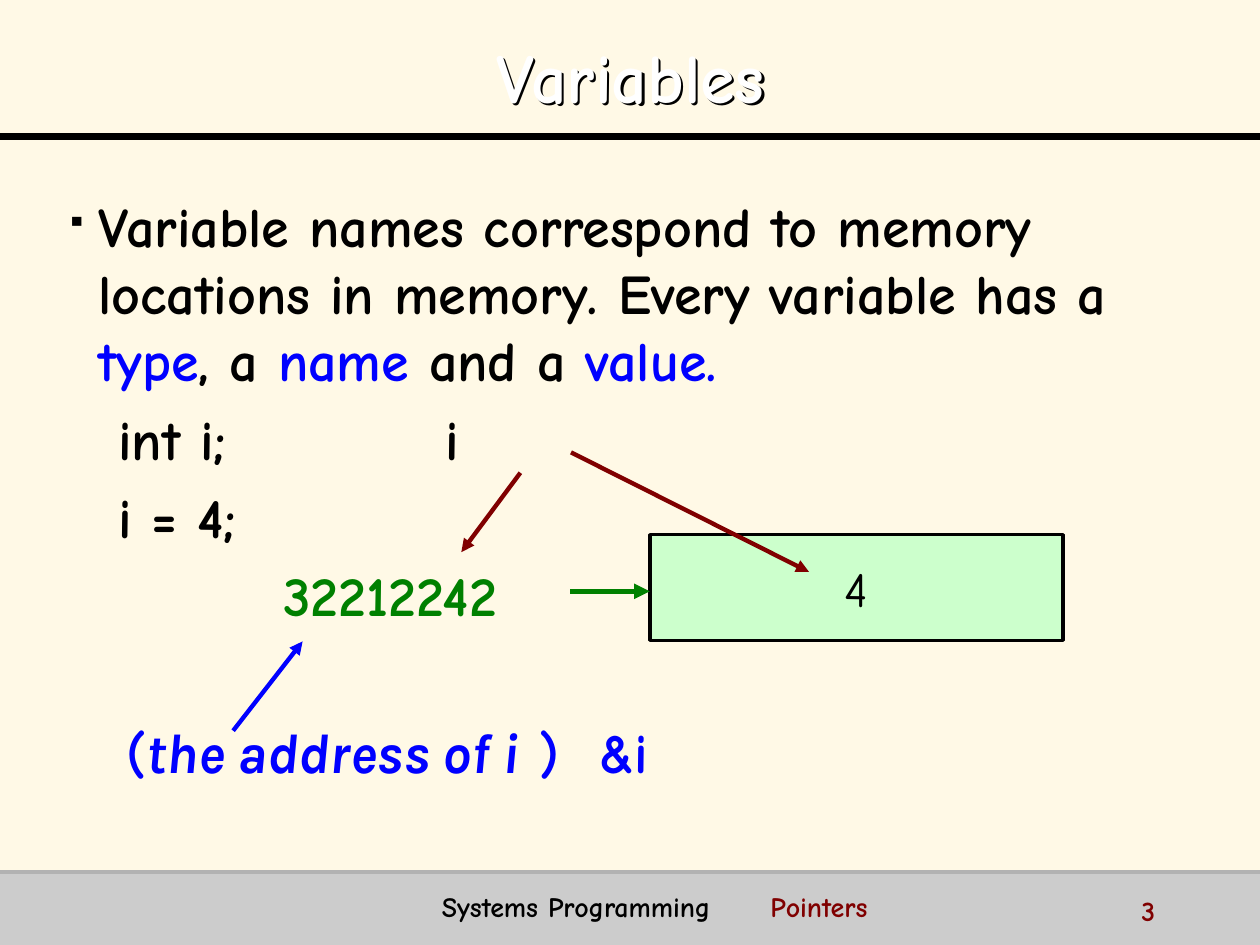
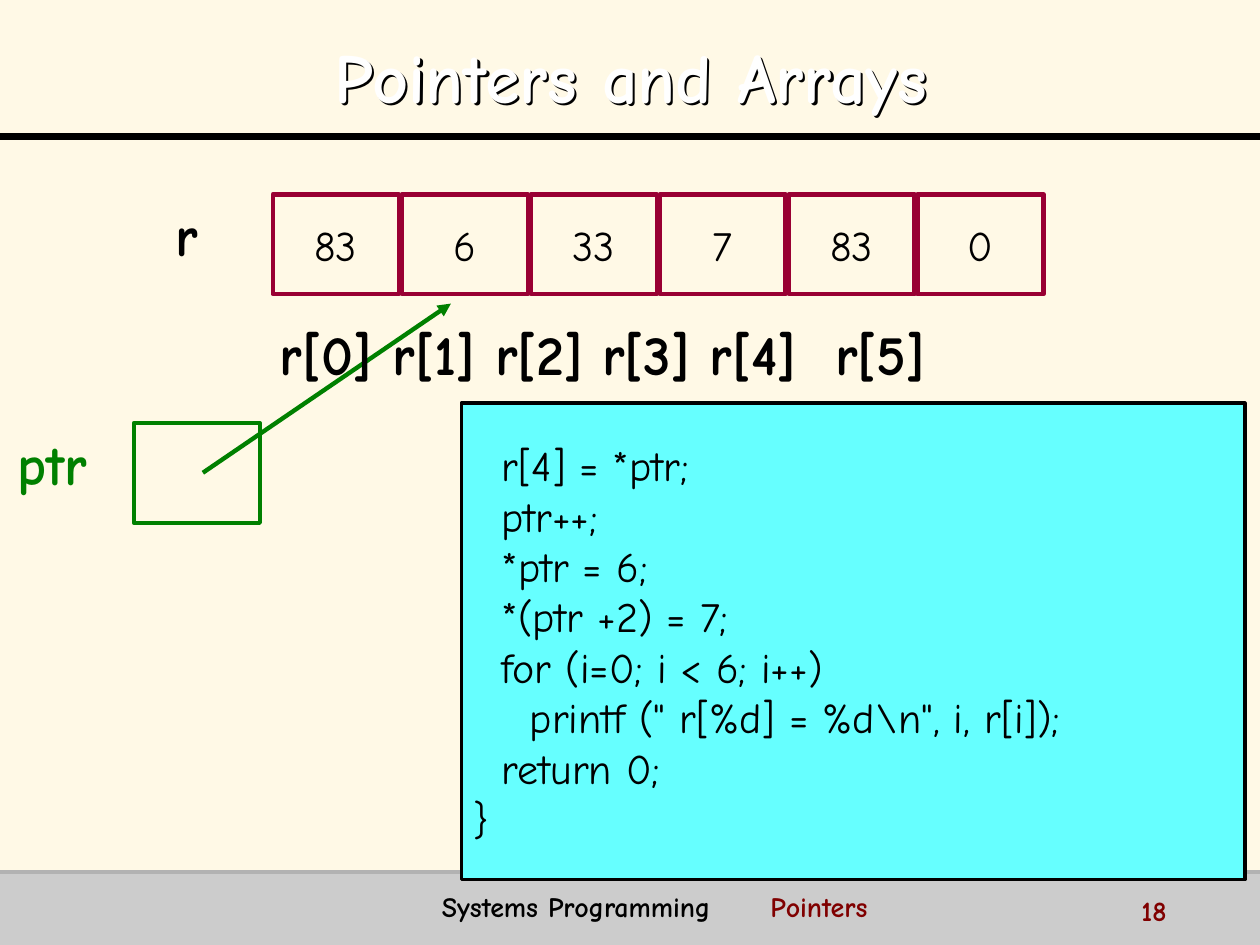
from dataclasses import dataclass

from lxml.etree import SubElement
from pptx import Presentation
from pptx.dml.color import RGBColor
from pptx.enum.shapes import MSO_CONNECTOR, MSO_SHAPE
from pptx.enum.text import MSO_ANCHOR, PP_ALIGN
from pptx.oxml.ns import qn
from pptx.util import Cm, Pt


@dataclass(frozen=True)
class Theme:
    font: str = "Comic Neue"
    accent_font: str = "Karla"
    paper: str = "FFF9E6"
    white: str = "FFFFFF"
    black: str = "000000"
    band: str = "CCCCCC"
    band_edge: str = "B2B2B2"
    blue: str = "0000FF"
    green: str = "008000"
    maroon: str = "800000"
    crimson: str = "990033"
    mint: str = "CCFFCC"
    cyan: str = "66FFFF"
    title: int = 40
    body: int = 32
    value: int = 28
    code: int = 24
    footer: int = 16


T = Theme()
WIDTH, HEIGHT = 25.4, 19.05
BAND_TOP, TITLE_RULE = 17.58, 2.75
TITLE_BOX = (0.51, 0.33, 24.41, 2.21)
FOOTER_BOX, FOOTER_TABS = (8.66, 17.81, 11, 1.12), [6.62]
NUMBER_BOX = (22.76, 17.88, 2.54, 0.84)

BLUE = {"color": T.blue}
GREEN = {"color": T.green}
MAROON = {"color": T.maroon}
ADDRESS = BLUE | {"name": T.accent_font, "italic": True}

# Paragraphs: runs, then bullet, tab stops (cm) and space before (pt)
VARIABLES = [
    {"runs": [("Variable names correspond to memory locations in memory. "
               "Every variable has a ", {}),
              ("type", BLUE), (", a", {}), (" name ", BLUE),
              ("and a", {}), (" value.", BLUE)], "bullet": "▪"},
    {"runs": [("\tint i;\ti", {})], "tabs": [1.04, 7.65], "before": 6.4},
    {"runs": [("\ti = 4;", {})], "tabs": [1.04], "before": 6.4},
    {"runs": [("\t32212242", GREEN)], "tabs": [4.37], "before": 6.4},
    {"runs": [("\t(", BLUE), ("the address of i", ADDRESS), (" )\t&i", BLUE)],
     "tabs": [1.22, 10.74], "before": 51},
]
VARIABLE_ARROWS = [
    ((11.51, 9.12), (16.31, 11.53), T.maroon, 2.5),
    ((10.49, 9.53), (9.3, 11.13), T.maroon, 2.5),
    ((11.5, 11.92), (13.1, 11.92), T.green, 3),
    ((4.7, 14.73), (6.1, 12.93), T.blue, 2.5),
]

ARRAY = [83, 6, 33, 7, 83, 0]
CELL_LEFT, CELL_TOP, CELL_PITCH = 5.5, 3.92, 2.6
CELL_SIZE = (2.54, 2.01)
POINTER_TOP = 8.53
INDEX_TABS = [2.28, 4.34, 6.5, 8.67, 11.2]
CODE = r'''  r[4] = *ptr;
  ptr++;
  *ptr = 6;
  *(ptr +2) = 7;
  for (i=0; i < 6; i++)
    printf (" r[%d] = %d\n", i, r[i]);
  return 0;
}'''


def set_all(target, **values):
    for name, value in values.items():
        setattr(target, name, value)


def cm(values):
    return [Cm(v) for v in values]


def rgb(color):
    return RGBColor.from_string(color)


def plain(text):
    return [{"runs": [(line, {})]} for line in text.split("\n")]


def add_bullet(p, char):
    pPr = p._p.get_or_add_pPr()
    pPr.set("marL", str(Cm(0.64)))
    pPr.set("indent", str(-Cm(0.64)))
    SubElement(SubElement(pPr, qn("a:buClr")), qn("a:srgbClr"), val=T.black)
    SubElement(pPr, qn("a:buSzPct"), val="50000")
    SubElement(pPr, qn("a:buChar"), char=char)


def add_tabs(p, stops):
    tabs = SubElement(p._p.get_or_add_pPr(), qn("a:tabLst"))
    for stop in stops:
        SubElement(tabs, qn("a:tab"), pos=str(Cm(stop)), algn="l")


def write(tf, paragraphs, size, bold=False, color=T.black,
          align=PP_ALIGN.LEFT, anchor=MSO_ANCHOR.TOP):
    set_all(tf, word_wrap=True, vertical_anchor=anchor)
    for i, item in enumerate(paragraphs):
        p = tf.add_paragraph() if i else tf.paragraphs[0]
        p.alignment = align
        if "before" in item:
            p.space_before = Pt(item["before"])
        if "bullet" in item:
            add_bullet(p, item["bullet"])
        if "tabs" in item:
            add_tabs(p, item["tabs"])
        for text, changes in item["runs"]:
            r = p.add_run()
            r.text = text
            style = {"name": T.font, "size": Pt(size), "bold": bold,
                     "color": color} | changes
            r.font.color.rgb = rgb(style.pop("color"))
            set_all(r.font, **style)


def add_text(s, box, paragraphs, size, **style):
    write(s.shapes.add_textbox(*cm(box)).text_frame, paragraphs, size,
          bold=True, **style)


def add_box(s, box, fill=None, line=None, width=2.5):
    sp = s.shapes.add_shape(MSO_SHAPE.RECTANGLE, *cm(box))
    sp.shadow.inherit = False
    if fill:
        sp.fill.solid()
        sp.fill.fore_color.rgb = rgb(fill)
    else:
        sp.fill.background()
    if line:
        sp.line.color.rgb = rgb(line)
        sp.line.width = Pt(width)
    else:
        sp.line.fill.background()
    return sp


def add_line(s, start, end, color, width, arrow=False):
    c = s.shapes.add_connector(MSO_CONNECTOR.STRAIGHT, *cm(start + end))
    c.line.color.rgb = rgb(color)
    c.line.width = Pt(width)
    if arrow:
        SubElement(c.line._get_or_add_ln(), qn("a:tailEnd"), type="triangle")
    SubElement(c._element.spPr, qn("a:effectLst"))


def add_title(s, text):
    """Fill the title; with no fill behind it, its letters cast the shadow."""
    title = s.shapes.title
    set_all(title, **dict(zip(("left", "top", "width", "height"),
                              cm(TITLE_BOX))))
    write(title.text_frame, plain(text), T.title, bold=True, color=T.white,
          align=PP_ALIGN.CENTER, anchor=MSO_ANCHOR.MIDDLE)
    title.text_frame.paragraphs[0].line_spacing = 1.1
    title.fill.background()
    title.line.fill.background()
    effects = SubElement(title._element.spPr, qn("a:effectLst"))
    shadow = SubElement(effects, qn("a:outerShdw"), blurRad="0",
                        dist=str(Cm(0.06)), dir="2700000", algn="tl",
                        rotWithShape="0")
    SubElement(shadow, qn("a:srgbClr"), val=T.black)


def new_slide(prs, title, number):
    """Add a slide with the shared title, rules, band and footer."""
    s = prs.slides.add_slide(prs.slide_layouts[5])
    s.background.fill.solid()
    s.background.fill.fore_color.rgb = rgb(T.paper)
    add_box(s, (0, BAND_TOP, WIDTH, HEIGHT - BAND_TOP), T.band)
    for y, color, width in ((TITLE_RULE, T.black, 4),
                            (BAND_TOP, T.band_edge, 2)):
        add_line(s, (0, y), (WIDTH, y), color, width)
    add_title(s, title)
    add_text(s, FOOTER_BOX, [{"runs": [("Systems Programming\t", {}),
                                       ("Pointers", MAROON)],
                              "tabs": FOOTER_TABS}], T.footer)
    add_text(s, NUMBER_BOX, plain(str(number)), T.footer, color=T.maroon)
    return s


def variables_slide(prs):
    s = new_slide(prs, "Variables", 3)
    add_text(s, (1.09, 3.73, 22.86, 13.34), VARIABLES, T.body)
    memory = add_box(s, (13.1, 10.78, 8.33, 2.13), T.mint, T.black, 2)
    write(memory.text_frame, plain("4"), T.value,
          align=PP_ALIGN.CENTER, anchor=MSO_ANCHOR.MIDDLE)
    for arrow in VARIABLE_ARROWS:
        add_line(s, *arrow, arrow=True)


def arrays_slide(prs):
    s = new_slide(prs, "Pointers and Arrays", 18)
    for i, value in enumerate(ARRAY):
        cell = add_box(s, (CELL_LEFT + i * CELL_PITCH, CELL_TOP, *CELL_SIZE),
                       line=T.crimson)
        write(cell.text_frame, plain(str(value)), T.code,
              align=PP_ALIGN.CENTER, anchor=MSO_ANCHOR.MIDDLE)
    add_text(s, (3.28, CELL_TOP, 1.5, 2.01), plain("r"), T.body)
    add_text(s, (0.1, POINTER_TOP, 2.5, 2.01), plain("ptr"), T.body,
             color=T.green)
    add_box(s, (2.7, POINTER_TOP, *CELL_SIZE), line=T.green)
    code = add_box(s, (9.3, 8.13, 15.8, 9.6), T.cyan, T.black, 2)
    write(code.text_frame, plain(CODE), T.code, anchor=MSO_ANCHOR.MIDDLE)
    add_line(s, (4.09, 9.53), (9.09, 6.12), T.green, 2.5, arrow=True)
    labels = "\t".join(f"r[{i}]" for i in range(len(ARRAY)))
    add_text(s, (5.39, 6.32, 16.5, 2.39),
             [{"runs": [(labels, {})], "tabs": INDEX_TABS}], T.body)


def main():
    prs = Presentation()
    set_all(prs, slide_width=Cm(WIDTH), slide_height=Cm(HEIGHT))
    variables_slide(prs)
    arrays_slide(prs)
    prs.save("out.pptx")


if __name__ == "__main__":
    main()
